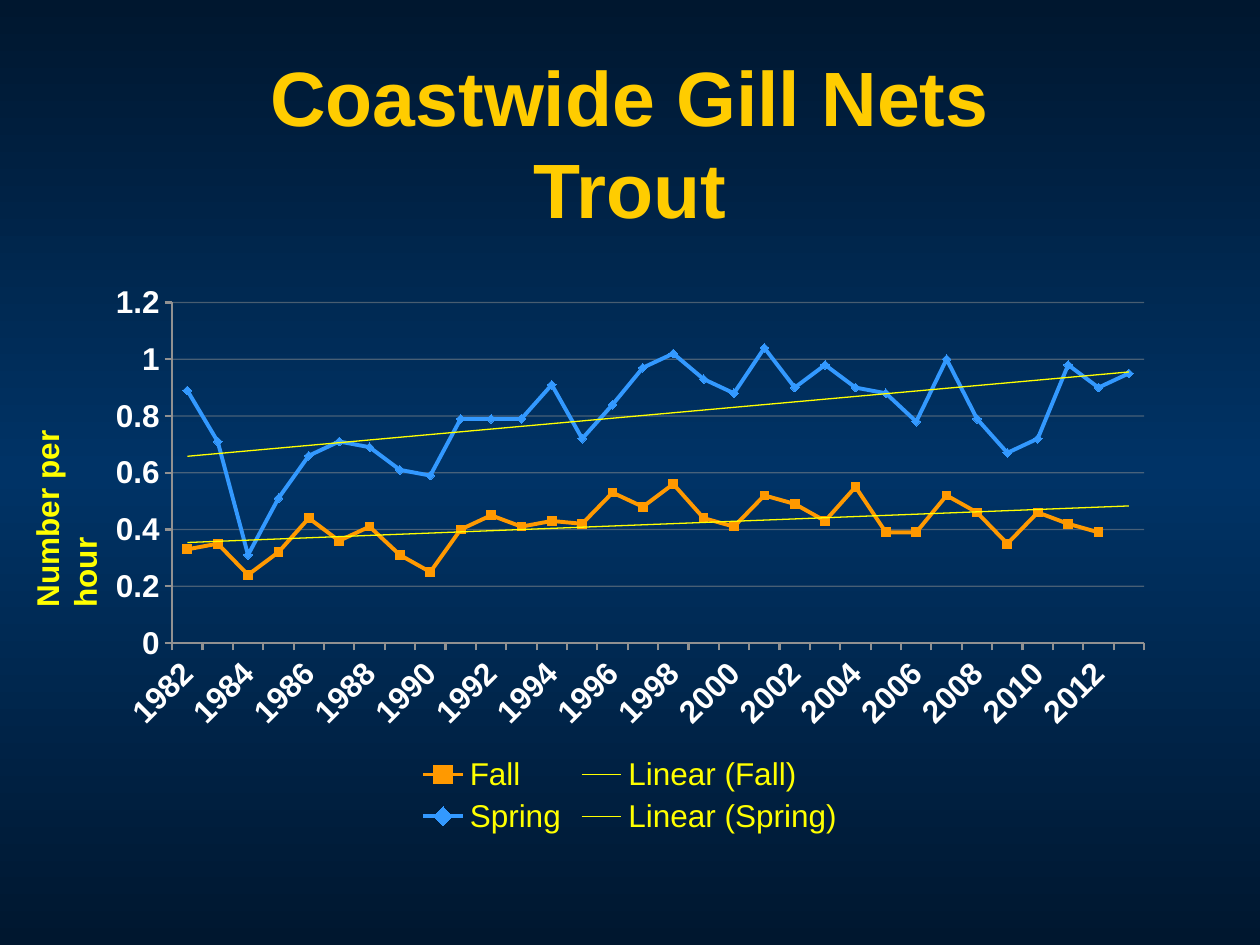
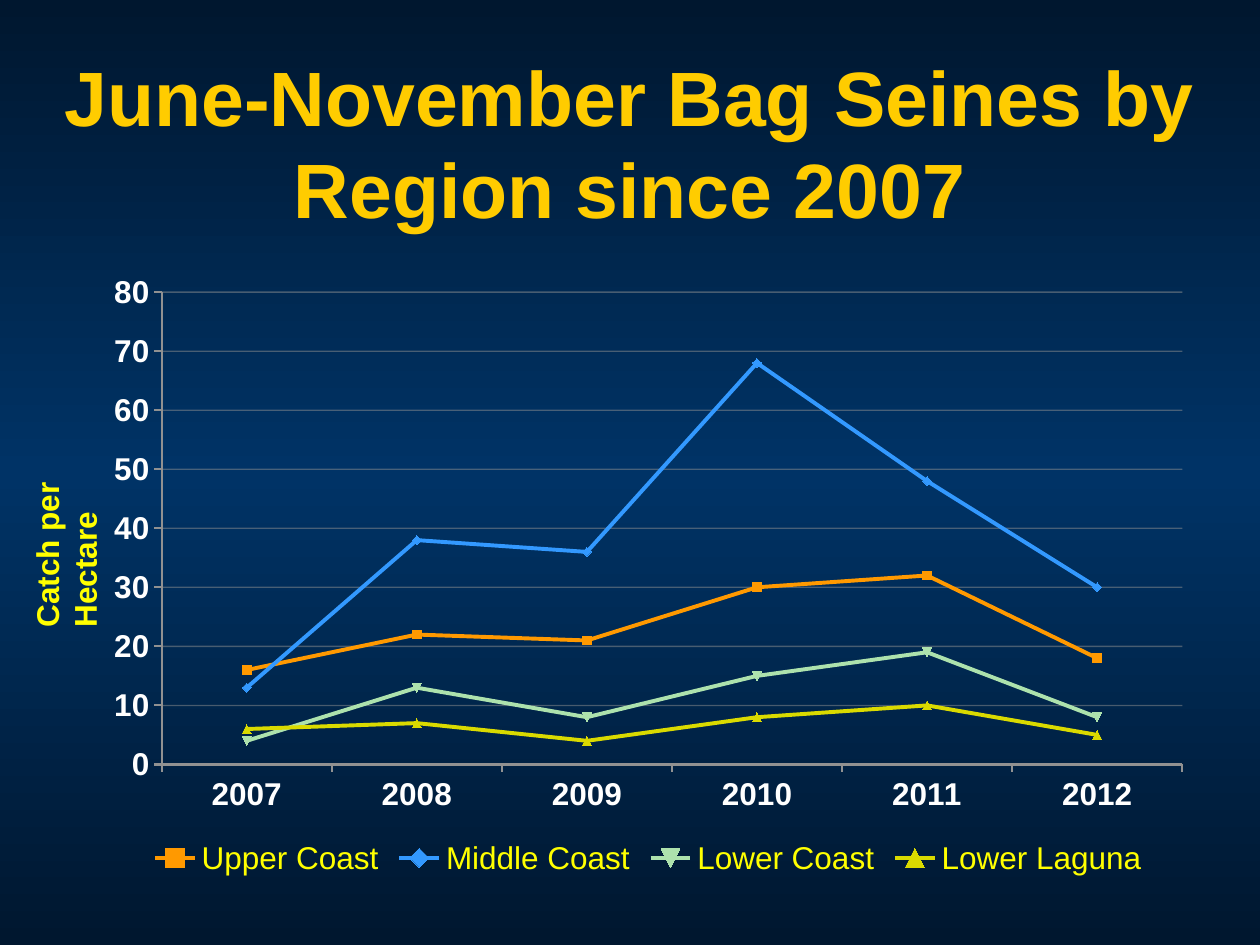
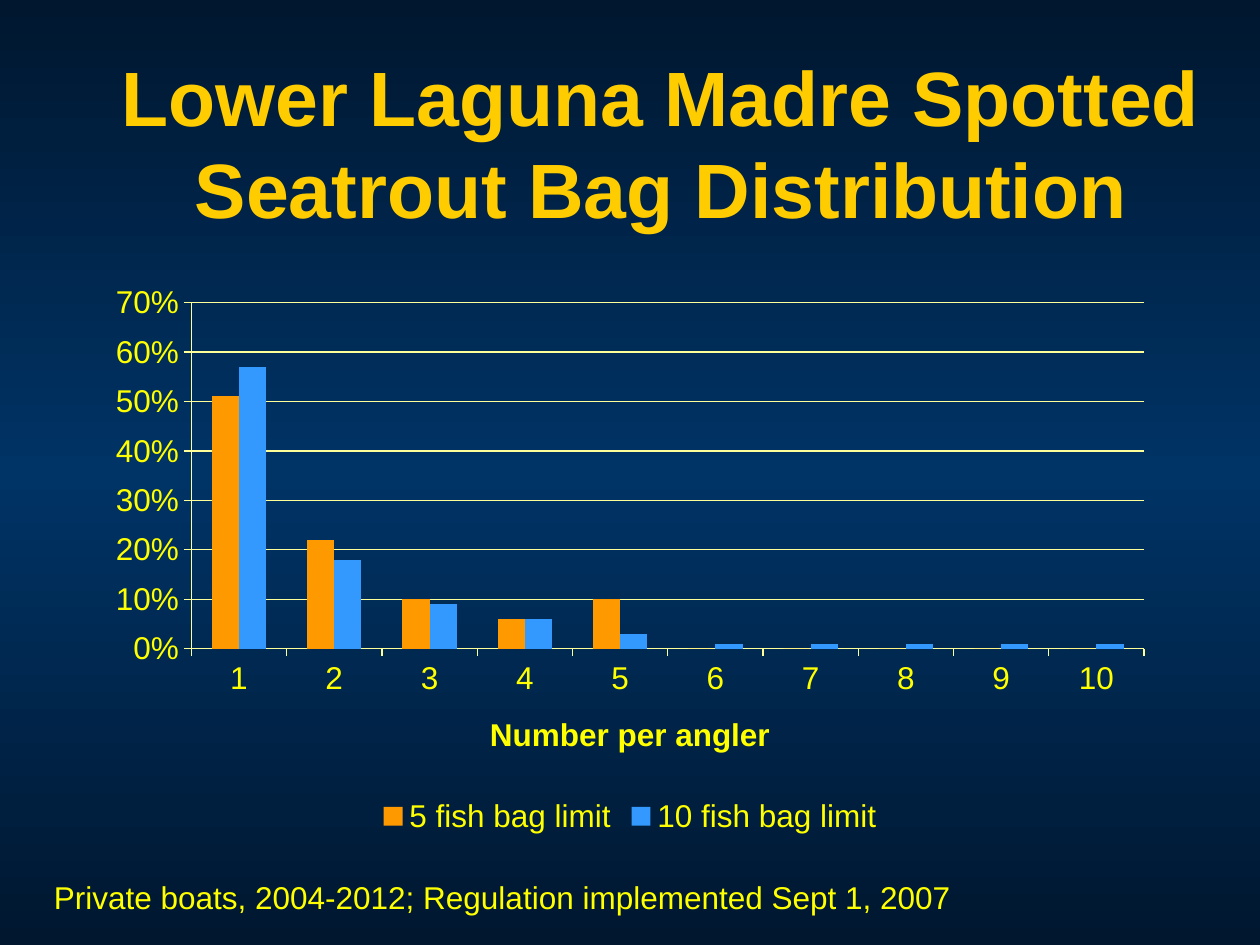
import copy
from dataclasses import dataclass
from typing import Optional

import pptx
import pptx.chart.data
import pptx.dml.color
import pptx.enum.chart
import pptx.enum.text
import pptx.oxml.ns
import pptx.util
from lxml import etree
from pptx.util import Inches

FONT = "Arial"
GOLD, YELLOW, PALE_YELLOW, WHITE = "FFCC00", "FFFF00", "FFFF99", "FFFFFF"
GREY, NAVY, DEEP_NAVY = "919191", "003366", "00172F"
ORANGE, BLUE, MINT, OLIVE = "FF9900", "3399FF", "ADE2AD", "DADA00"
LABEL_SIZE = 18
LINES = pptx.enum.chart.XL_CHART_TYPE.LINE_MARKERS
COLUMNS = pptx.enum.chart.XL_CHART_TYPE.COLUMN_CLUSTERED
Box = tuple[float, float, float, float]


@dataclass
class Series:
    name: str
    color: str
    values: list[Optional[float]]
    trend: bool = False


@dataclass
class Caption:
    text: str
    box: Box
    vertical: bool = False


@dataclass
class ChartSlide:
    title: str
    title_box: Box
    chart_box: Box
    kind: int
    categories: list[int]
    series: list[Series]
    top_value: float
    step: float
    caption: Caption
    number_format: str = "General"
    category_title: str = ""
    label_angle: int = 0


SLIDES = [
    ChartSlide(
        "Coastwide Gill Nets\vTrout", (0, 0.5, 10, 1.25), (0.75, 2.17, 8.5, 4.5),
        LINES, list(range(1982, 2014)),
        [
            Series("Fall", ORANGE, [
                0.33, 0.35, 0.24, 0.32, 0.44, 0.36, 0.41, 0.31, 0.25, 0.4, 0.45,
                0.41, 0.43, 0.42, 0.53, 0.48, 0.56, 0.44, 0.41, 0.52, 0.49, 0.43,
                0.55, 0.39, 0.39, 0.52, 0.46, 0.35, 0.46, 0.42, 0.39, None], True),
            Series("Spring", BLUE, [
                0.89, 0.71, 0.31, 0.51, 0.66, 0.71, 0.69, 0.61, 0.59, 0.79, 0.79,
                0.79, 0.91, 0.72, 0.84, 0.97, 1.02, 0.93, 0.88, 1.04, 0.9, 0.98,
                0.9, 0.88, 0.78, 1, 0.79, 0.67, 0.72, 0.98, 0.9, 0.95], True),
        ],
        1.2, 0.2, Caption("Number per hour", (0.17, 2.75, 0.5, 2.17), True),
        label_angle=-45,
    ),
    ChartSlide(
        "June-November Bag Seines by Region since 2007", (0, 0.5, 10, 1.25),
        (0.73, 2.08, 8.83, 4.92), LINES, list(range(2007, 2013)),
        [
            Series("Upper Coast", ORANGE, [16, 22, 21, 30, 32, 18]),
            Series("Middle Coast", BLUE, [13, 38, 36, 68, 48, 30]),
            Series("Lower Coast", MINT, [4, 13, 8, 15, 19, 8]),
            Series("Lower Laguna", OLIVE, [6, 7, 4, 8, 10, 5]),
        ],
        80, 10, Caption("Catch per Hectare", (0.17, 2.75, 0.5, 2.33), True),
    ),
    ChartSlide(
        "Lower Laguna Madre Spotted Seatrout Bag Distribution", (0.75, 0.5, 9, 1.25),
        (0.75, 2.17, 8.5, 4.5), COLUMNS, list(range(1, 11)),
        [
            Series("5 fish bag limit", ORANGE, [0.51, 0.22, 0.1, 0.06, 0.1, 0, 0, 0, 0, 0]),
            Series("10 fish bag limit", BLUE,
                   [0.57, 0.18, 0.09, 0.06, 0.03, 0.01, 0.01, 0.01, 0.01, 0.01]),
        ],
        0.7, 0.1,
        Caption("Private boats, 2004-2012; Regulation implemented Sept 1, 2007",
                (0.33, 6.92, 7.38, 0.4)),
        number_format="0%", category_title="Number per angler",
    ),
]


def rgb(value: str) -> pptx.dml.color.RGBColor:
    return pptx.dml.color.RGBColor.from_string(value)


def style_font(font, color: str, bold: bool = False, size: int = LABEL_SIZE) -> None:
    font.name = FONT
    font.size = pptx.util.Pt(size)
    font.bold = bold
    font.color.rgb = rgb(color)


def style_line(line, color: str, width: float) -> None:
    line.color.rgb = rgb(color)
    line.width = pptx.util.Pt(width)


def add_child(parent, tag: str, **attributes: str):
    return etree.SubElement(parent, pptx.oxml.ns.qn(tag), attributes)


def paint_background(master) -> None:
    """Give every slide the navy gradient, brightest in the middle."""
    fill = master.background.fill
    fill.gradient()
    fill.gradient_angle = 90
    first = master.element.xpath(".//p:bgPr//a:gs")[0]
    first.addnext(copy.deepcopy(first))
    for stop, position, color in zip(
            fill.gradient_stops, (0, 0.5, 1), (DEEP_NAVY, NAVY, DEEP_NAVY)):
        stop.position = position
        stop.color.rgb = rgb(color)


def place_title(title, text: str, box: Box) -> None:
    title.left, title.top, title.width, title.height = map(Inches, box)
    frame = title.text_frame
    frame.text = text
    frame.word_wrap = True
    frame.auto_size = pptx.enum.text.MSO_AUTO_SIZE.NONE
    frame.vertical_anchor = pptx.enum.text.MSO_ANCHOR.MIDDLE
    paragraph = frame.paragraphs[0]
    paragraph.alignment = pptx.enum.text.PP_ALIGN.CENTER
    for run in paragraph.runs:
        style_font(run.font, GOLD, True, 44)


def add_caption(slide, caption: Caption) -> None:
    textbox = slide.shapes.add_textbox(*map(Inches, caption.box))
    frame = textbox.text_frame
    frame.text = caption.text
    frame.word_wrap = caption.vertical
    frame.auto_size = pptx.enum.text.MSO_AUTO_SIZE.SHAPE_TO_FIT_TEXT
    if caption.vertical:
        textbox.element.xpath(".//a:bodyPr")[0].set("vert", "vert270")
    style_font(frame.paragraphs[0].runs[0].font, YELLOW, caption.vertical)


def add_trendline(chart, index: int, name: str) -> None:
    categories = chart.element.xpath(".//c:ser")[index].xpath("c:cat")[0]
    trendline = etree.Element(pptx.oxml.ns.qn("c:trendline"))
    add_child(trendline, "c:name").text = f"Linear ({name})"
    line = add_child(add_child(trendline, "c:spPr"), "a:ln", w=str(pptx.util.Pt(0.75)))
    add_child(add_child(line, "a:solidFill"), "a:srgbClr", val=YELLOW)
    add_child(trendline, "c:trendlineType", val="linear")
    add_child(trendline, "c:dispRSqr", val="0")
    add_child(trendline, "c:dispEq", val="0")
    categories.addprevious(trendline)


def style_series(chart, spec_list: list[Series], is_line: bool) -> None:
    for index, (drawn, series) in enumerate(zip(chart.plots[0].series, spec_list)):
        if is_line:
            drawn.smooth = False
            style_line(drawn.format.line, series.color, 2.25)
            drawn.marker.size = 5
            for part in (drawn.marker.format.fill, drawn.marker.format.line.fill):
                part.solid()
                part.fore_color.rgb = rgb(series.color)
        else:
            drawn.format.fill.solid()
            drawn.format.fill.fore_color.rgb = rgb(series.color)
        if series.trend:
            add_trendline(chart, index, series.name)


def style_axes(chart, content: ChartSlide, is_line: bool) -> None:
    category_axis, value_axis = chart.category_axis, chart.value_axis
    line_color, line_width = (GREY, 1.25) if is_line else (PALE_YELLOW, 0.75)
    for axis in (category_axis, value_axis):
        axis.major_tick_mark = pptx.enum.chart.XL_TICK_MARK.OUTSIDE
        axis.minor_tick_mark = pptx.enum.chart.XL_TICK_MARK.NONE
        style_line(axis.format.line, line_color, line_width)
        style_font(axis.tick_labels.font, WHITE if is_line else YELLOW, is_line)

    value_axis.minimum_scale = 0
    value_axis.maximum_scale = content.top_value
    value_axis.major_unit = content.step
    value_axis.tick_labels.number_format = content.number_format
    value_axis.tick_labels.number_format_is_linked = False
    value_axis.has_major_gridlines = True
    style_line(value_axis.major_gridlines.format.line, line_color, 0.75)
    if is_line:
        grid_color = chart.element.xpath(".//c:majorGridlines//a:srgbClr")[0]
        add_child(grid_color, "a:alpha", val="50000")

    if content.label_angle:
        label_body = chart.element.xpath(".//c:catAx/c:txPr/a:bodyPr")[0]
        label_body.set("rot", str(content.label_angle * 60000))
    if content.category_title:
        frame = category_axis.axis_title.text_frame
        frame.text = content.category_title
        style_font(frame.paragraphs[0].runs[0].font, YELLOW, True)


def add_data_chart(slide, content: ChartSlide) -> None:
    data = pptx.chart.data.CategoryChartData(number_format=content.number_format)
    data.categories = content.categories
    for series in content.series:
        data.add_series(series.name, series.values)
    chart = slide.shapes.add_chart(
        content.kind, *map(Inches, content.chart_box), data).chart
    is_line = content.kind == LINES
    style_font(chart.font, YELLOW)
    chart.has_title = False
    chart.has_legend = True
    chart.legend.position = pptx.enum.chart.XL_LEGEND_POSITION.BOTTOM
    chart.legend.include_in_layout = False
    style_font(chart.legend.font, YELLOW)
    plot = chart.plots[0]
    plot.vary_by_categories = False
    if not is_line:
        plot.gap_width = 150
    style_series(chart, content.series, is_line)
    style_axes(chart, content, is_line)


def main() -> None:
    presentation = pptx.Presentation()
    presentation.slide_width, presentation.slide_height = Inches(10), Inches(7.5)
    paint_background(presentation.slide_master)
    title_only = presentation.slide_layouts[5]
    for content in SLIDES:
        slide = presentation.slides.add_slide(title_only)
        place_title(slide.shapes.title, content.title, content.title_box)
        add_data_chart(slide, content)
        add_caption(slide, content.caption)
    presentation.save("out.pptx")


if __name__ == "__main__":
    main()
